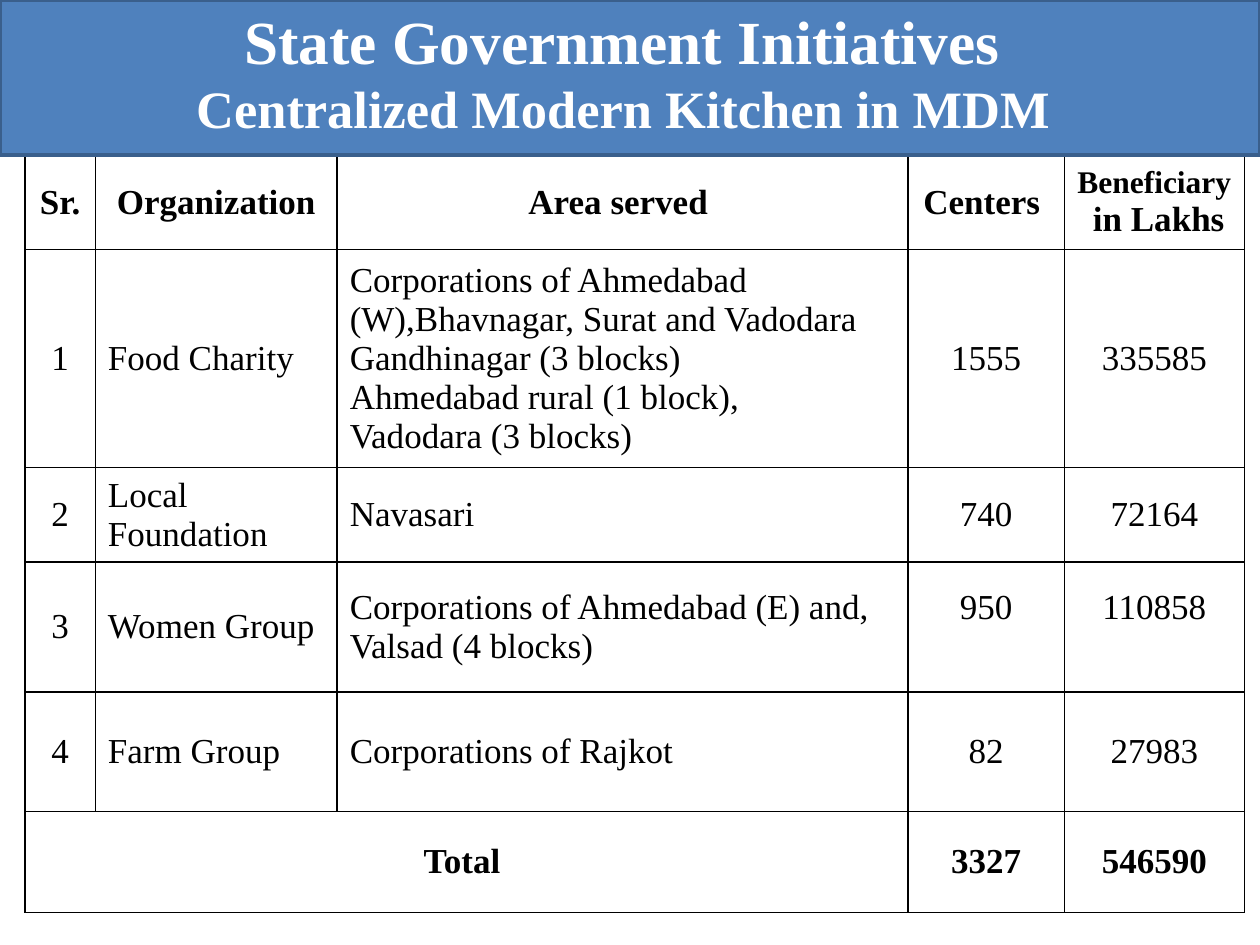
import pptx
import pptx.dml.color
import pptx.enum.shapes
import pptx.enum.text
import pptx.oxml
import pptx.oxml.ns
import pptx.util

Pt = pptx.util.Pt
ALIGN = pptx.enum.text.PP_ALIGN
MIDDLE = pptx.enum.text.MSO_ANCHOR.MIDDLE

COLUMNS = [40.3, 138.2, 326.2, 89.3, 103]
ROWS = [54, 124.6, 54, 74.2, 68.4, 57.6]
AREAS = "\n".join([
    "Corporations of Ahmedabad (W),Bhavnagar, Surat and Vadodara",
    "Gandhinagar (3 blocks)",
    "Ahmedabad rural (1 block),",
    "Vadodara (3 blocks)",
])
KITCHENS = [
    ["Sr.", "Organization", "Area served ", "Centers ", "Beneficiary\n in Lakhs"],
    ["1", "Food Charity", AREAS, "1555", "335585"],
    ["2", "Local Foundation", "Navasari", "740", "72164"],
    ["3", "Women Group", "Corporations of Ahmedabad (E) and, Valsad (4 blocks)",
     "950", "110858"],
    ["4", "Farm Group", "Corporations of Rajkot", "82", "27983"],
    ["Total ", "", "", "3327", "546590"],
]


def color(value):
    return pptx.dml.color.RGBColor.from_string(value)


class Deck:
    font = "Times New Roman"
    ink = "000000"
    paper = "FFFFFF"
    banner_fill = "4F81BD"
    banner_line = "3A5F8C"

    def __init__(self, width, height):
        self.prs = pptx.Presentation()
        self.prs.slide_width = Pt(width)
        self.prs.slide_height = Pt(height)
        self.s = self.prs.slides.add_slide(self.prs.slide_layouts[6])

    def format(self, p, size, ink, bold, align):
        p.alignment = align
        for r in p.runs:
            r.font.name = self.font
            r.font.size = Pt(size)
            r.font.bold = bold
            r.font.color.rgb = color(ink)

    def banner(self, x, y, w, h, lines, sizes):
        sp = self.s.shapes.add_shape(
            pptx.enum.shapes.MSO_SHAPE.RECTANGLE, Pt(x), Pt(y), Pt(w), Pt(h))
        sp.shadow.inherit = False
        sp.fill.solid()
        sp.fill.fore_color.rgb = color(self.banner_fill)
        sp.line.color.rgb = color(self.banner_line)
        sp.line.width = Pt(2)
        tf = sp.text_frame
        tf.word_wrap = True
        tf.vertical_anchor = MIDDLE
        tf.margin_top = 0
        tf.margin_bottom = Pt(7.2)
        tf.text = "\n".join(lines)
        for p, size in zip(tf.paragraphs, sizes):
            self.format(p, size, self.paper, True, ALIGN.CENTER)

    def borders(self, cell):
        tc_pr = cell._tc.get_or_add_tcPr()
        for i, side in enumerate(["lnL", "lnR", "lnT", "lnB"]):
            tc_pr.insert(i, pptx.oxml.parse_xml(
                f'<a:{side} {pptx.oxml.ns.nsdecls("a")} w="{Pt(1)}"><a:solidFill>'
                f'<a:srgbClr val="{self.ink}"/></a:solidFill></a:{side}>'))

    def cell(self, cell, text, bold, align):
        cell.fill.solid()
        cell.fill.fore_color.rgb = color(self.paper)
        cell.vertical_anchor = MIDDLE
        self.borders(cell)
        cell.text_frame.text = text
        for p in cell.text_frame.paragraphs:
            self.format(p, 20, self.ink, bold, align)

    def table(self, x, y, columns, rows, data):
        table = self.s.shapes.add_table(
            len(rows), len(columns), Pt(x), Pt(y),
            Pt(sum(columns)), Pt(sum(rows))).table
        table.first_row = table.horz_banding = False
        for column, width in zip(table.columns, columns):
            column.width = Pt(width)
        for row, height in zip(table.rows, rows):
            row.height = Pt(height)
        last = len(rows) - 1
        for i, texts in enumerate(data):
            bold = i in (0, last)
            for j, text in enumerate(texts):
                left = not bold and j in (1, 2)
                self.cell(table.cell(i, j), text, bold,
                          ALIGN.LEFT if left else ALIGN.CENTER)
        return table


def main():
    deck = Deck(720, 540)
    table = deck.table(14.2, 88.6, COLUMNS, ROWS, KITCHENS)
    table.cell(5, 0).merge(table.cell(5, 2))
    table.cell(0, 4).text_frame.paragraphs[0].runs[0].font.size = Pt(18)
    for column in (3, 4):
        table.cell(3, column).margin_bottom = Pt(25.6)
    deck.banner(0, 0, 720, 88.6,
                ["State Government Initiatives ",
                 "Centralized Modern Kitchen in MDM "], [35, 30])
    deck.prs.save("out.pptx")


if __name__ == "__main__":
    main()
